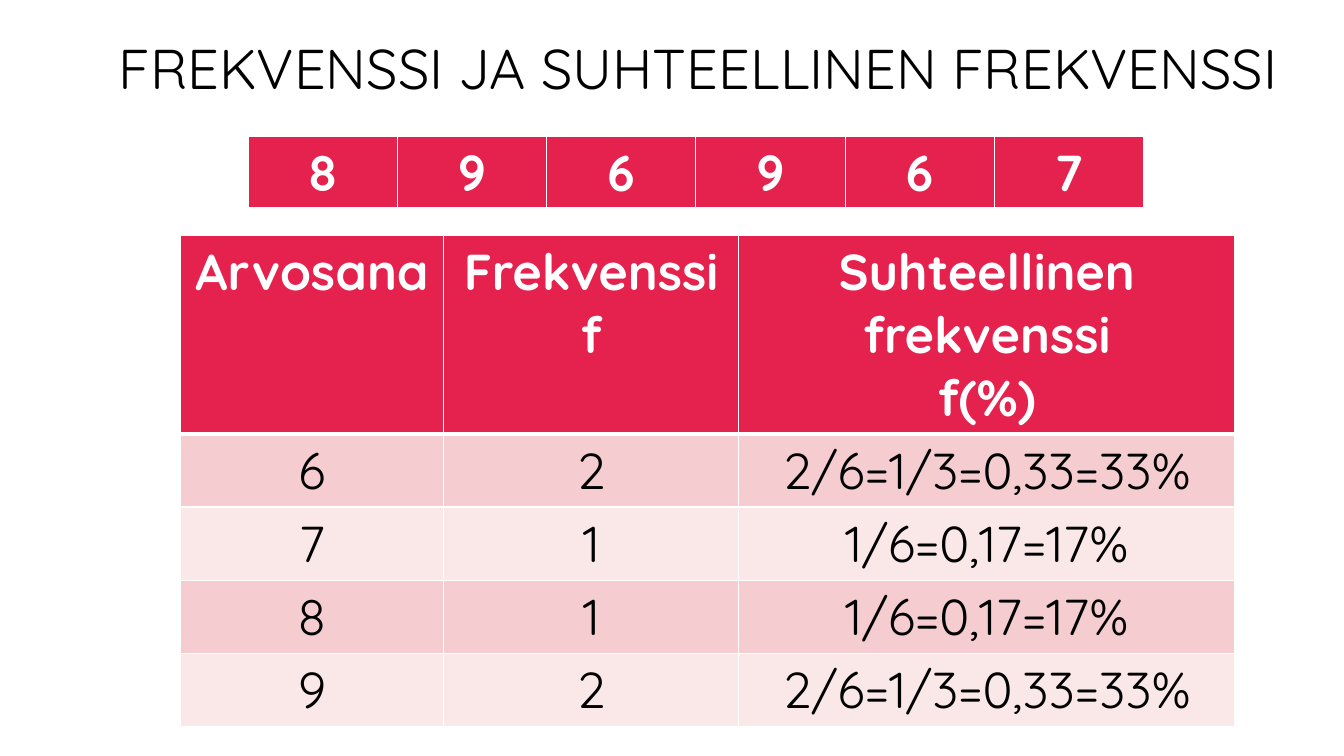
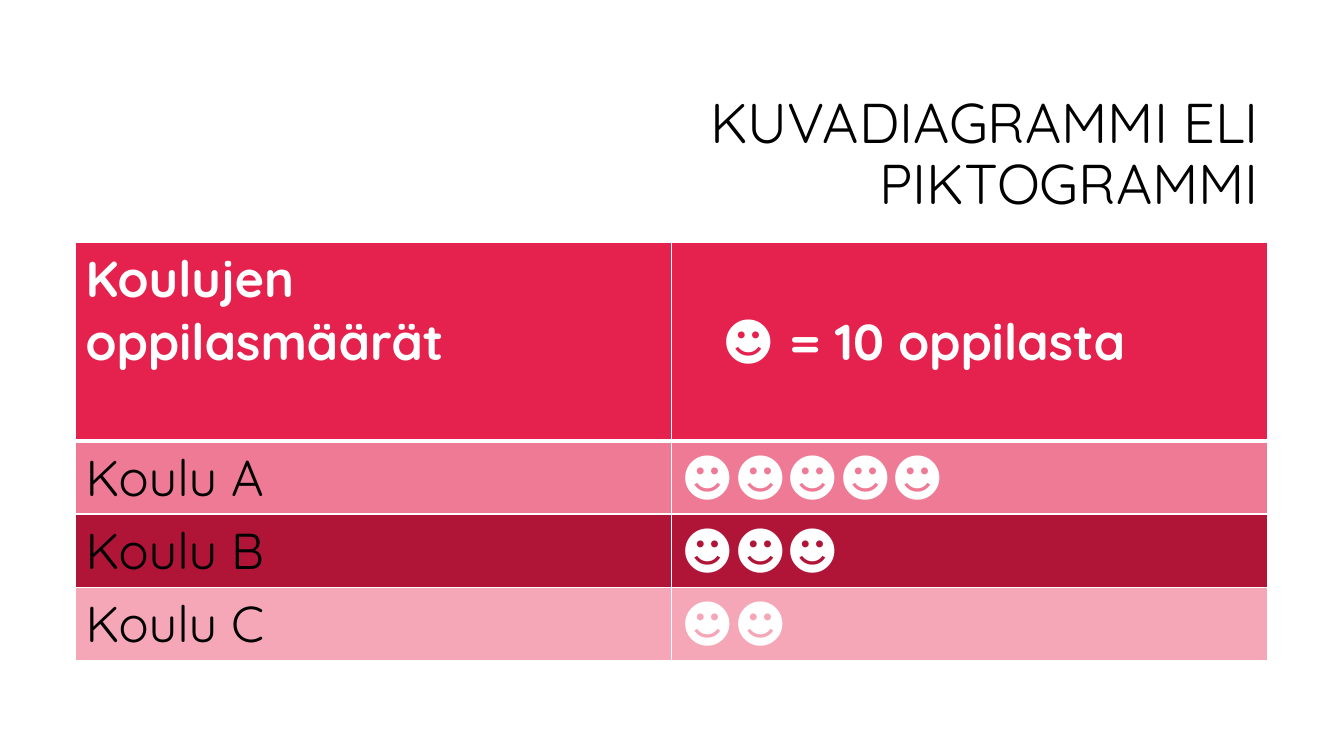
import pptx
import pptx.dml.color
import pptx.enum.text
import pptx.oxml
import pptx.oxml.ns
import pptx.util
from pptx.util import Pt

ALIGN = pptx.enum.text.PP_ALIGN
ANCHOR = pptx.enum.text.MSO_ANCHOR

# Shared style
FONT = "Quicksand"
WHITE, BLACK, RED = "FFFFFF", "000000", "E5224E"
PINK, PALE_PINK = "F5CDD0", "FAE8E9"
LINE_HEIGHT = 45
ROW_HEIGHT = LINE_HEIGHT + 7.2
HEADER_HEIGHT = 3 * LINE_HEIGHT + 7.2


def color(hex_string):
    return pptx.dml.color.RGBColor.from_string(hex_string)


def write(text_frame, text, size=36, ink=BLACK, bold=False,
          align=ALIGN.LEFT, spacing=None):
    """Write text: a newline starts a paragraph, a vertical tab a line."""
    text_frame.text = text
    for paragraph in text_frame.paragraphs:
        paragraph.alignment = align
        if spacing:
            paragraph.line_spacing = spacing
        for run in paragraph.runs:
            run.font.name = FONT
            run.font.size = Pt(size)
            run.font.bold = bold
            run.font.color.rgb = color(ink)


def set_borders(cell, **widths):
    """Draw white cell borders; widths in points, keyed L, R, T and B."""
    properties = cell._tc.get_or_add_tcPr()
    for index, (side, width) in enumerate(widths.items()):
        border = pptx.oxml.parse_xml(
            f'<a:ln{side} {pptx.oxml.ns.nsdecls("a")} w="{Pt(width)}">'
            f'<a:solidFill><a:srgbClr val="{WHITE}"/></a:solidFill></a:ln{side}>')
        properties.insert(index, border)


class Deck:
    """Holds the presentation and the slide being built."""

    def __init__(self):
        self.presentation = pptx.Presentation()
        self.presentation.slide_width = Pt(960)
        self.presentation.slide_height = Pt(540)
        self.slide = None

    def add_slide(self):
        layout = self.presentation.slide_layouts[6]
        self.slide = self.presentation.slides.add_slide(layout)

    def add_title(self, text, left, top, width):
        box = self.slide.shapes.add_textbox(Pt(left), Pt(top), Pt(width), Pt(101.5))
        box.text_frame.word_wrap = True
        box.text_frame.vertical_anchor = ANCHOR.MIDDLE
        write(box.text_frame, text, size=40, align=ALIGN.RIGHT, spacing=0.9)

    def add_table(self, rows, fills, left, top, widths,
                  header_height=HEADER_HEIGHT, align=ALIGN.CENTER, inks=None):
        """Add a table with a header row; inks gives body colours by column."""
        inks = inks or [BLACK] * len(widths)
        heights = [header_height] + [ROW_HEIGHT] * (len(rows) - 1)
        frame = self.slide.shapes.add_table(
            len(rows), len(widths), Pt(left), Pt(top), Pt(sum(widths)), Pt(sum(heights)))
        table = frame.table
        for column, width in zip(table.columns, widths):
            column.width = Pt(width)
        for row_index, (texts, fill) in enumerate(zip(rows, fills)):
            is_header = row_index == 0
            table.rows[row_index].height = Pt(heights[row_index])
            for column_index, text in enumerate(texts):
                cell = table.cell(row_index, column_index)
                cell.fill.solid()
                cell.fill.fore_color.rgb = color(fill)
                set_borders(cell, L=1, R=1, T=3 if row_index == 1 else 1,
                            B=3 if is_header else 1)
                write(cell.text_frame, text, bold=is_header, align=align,
                      ink=WHITE if is_header else inks[column_index])
        return table


def add_frequency_slide(deck):
    deck.add_slide()
    deck.add_title("FREKVENSSI JA SUHTEELLINEN FREKVENSSI", 23.8, 0, 895.7)
    # Grades
    deck.add_table([list("896967")], [RED], 177.1, 97.2, [106.65] * 6,
                   header_height=ROW_HEIGHT)
    # Frequencies
    rows = [
        ["Arvosana", "Frekvenssi\vf", "Suhteellinen frekvenssi\nf(%)"],
        ["6", "2", "2/6=1/3=0,33=33%"],
        ["7", "1", "1/6=0,17=17%"],
        ["8", "1", "1/6=0,17=17%"],
        ["9", "2", "2/6=1/3=0,33=33%"],
    ]
    deck.add_table(rows, [RED] + [PINK, PALE_PINK] * 2, 128.9, 167.8,
                   [187.9, 211, 354.2])


def add_pictogram_slide(deck):
    deck.add_slide()
    deck.add_title("KUVADIAGRAMMI ELI PIKTOGRAMMI", 228.2, 60.5, 678.2)
    # One symbol for every ten pupils
    symbol = "☻"
    schools = {"Koulu A": 5, "Koulu B": 3, "Koulu C": 2}
    rows = [["Koulujen oppilasmäärät", f"{symbol} = 10 oppilasta"]]
    rows += [[school, symbol * count] for school, count in schools.items()]
    table = deck.add_table(rows, [RED, "EF7A95", "B01538", "F5A7B8"], 54, 172.8,
                           [425.9] * 2, align=ALIGN.LEFT, inks=[BLACK, WHITE])
    # Header wraps on the left; the key sits on the second line
    heading, key = table.cell(0, 0), table.cell(0, 1)
    heading.margin_right = Pt(36)
    key.margin_left = Pt(36.5)
    key.margin_top = Pt(3.6 + LINE_HEIGHT)


def main():
    deck = Deck()
    add_frequency_slide(deck)
    add_pictogram_slide(deck)
    deck.presentation.save("out.pptx")


if __name__ == "__main__":
    main()
